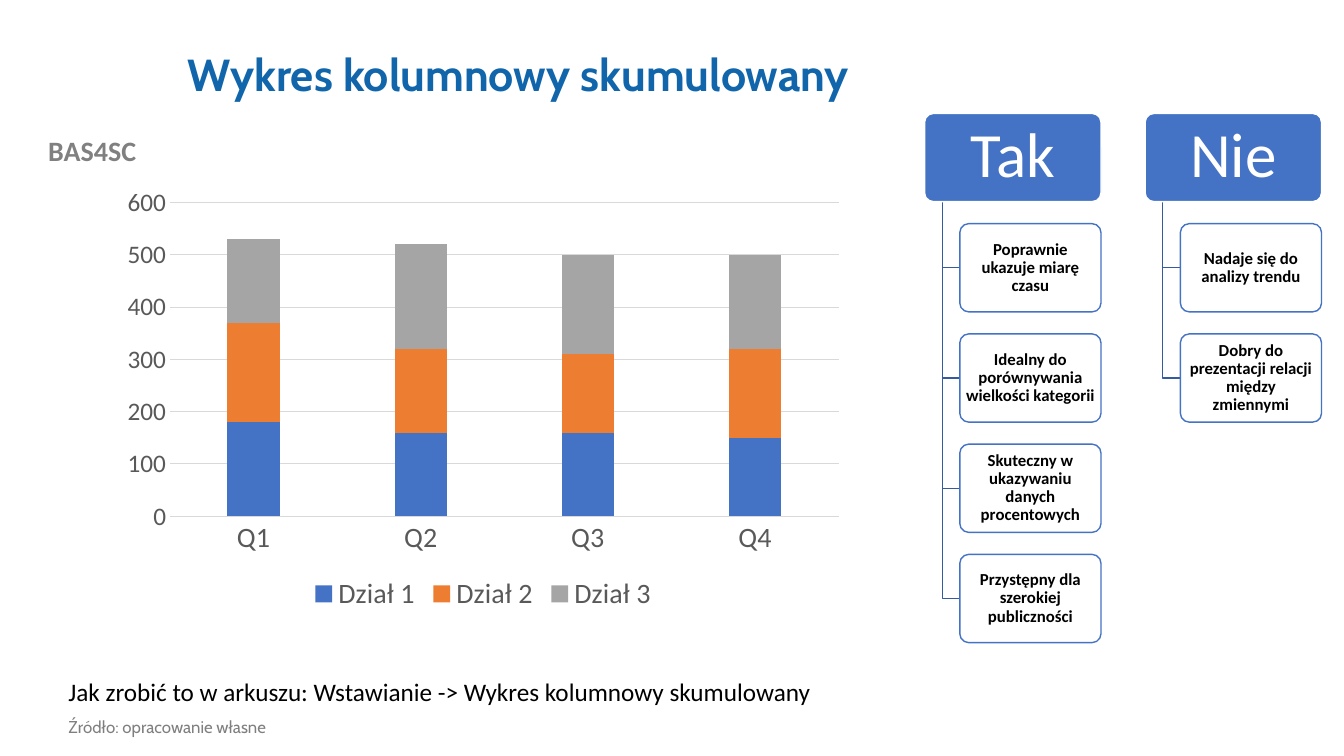
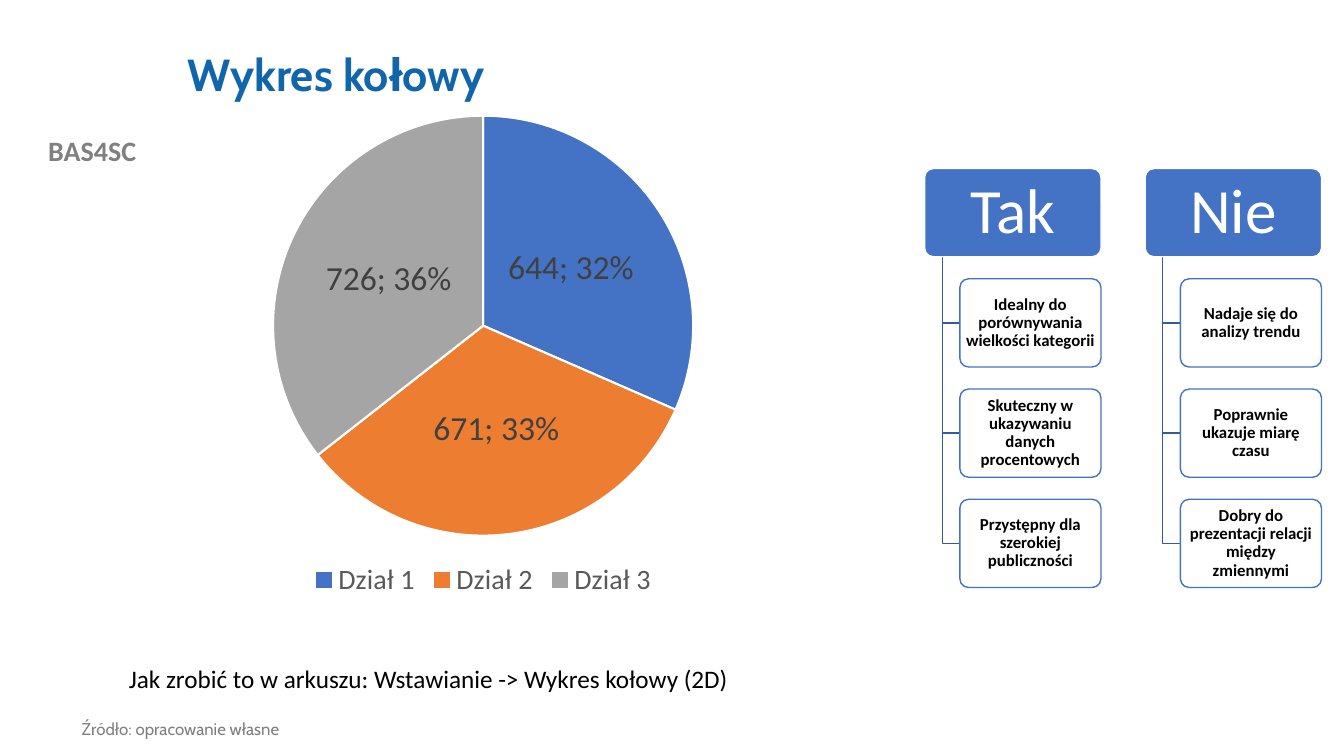
"""Build two slides comparing a stacked column chart with a pie chart."""
from lxml import etree
from pptx import Presentation
from pptx.chart.data import CategoryChartData
from pptx.dml.color import RGBColor
from pptx.enum.chart import XL_CHART_TYPE, XL_LABEL_POSITION, XL_LEGEND_POSITION, XL_TICK_MARK
from pptx.enum.shapes import MSO_SHAPE
from pptx.enum.text import MSO_ANCHOR, PP_ALIGN
from pptx.oxml.ns import qn
from pptx.util import Inches, Pt

STACKED, PIE = XL_CHART_TYPE.COLUMN_STACKED, XL_CHART_TYPE.PIE
LABEL_CENTER = XL_LABEL_POSITION.CENTER
LEGEND_BOTTOM = XL_LEGEND_POSITION.BOTTOM
NO_TICK = XL_TICK_MARK.NONE
ROUNDED = MSO_SHAPE.ROUNDED_RECTANGLE
TOP, MIDDLE = MSO_ANCHOR.TOP, MSO_ANCHOR.MIDDLE
LEFT, CENTER = PP_ALIGN.LEFT, PP_ALIGN.CENTER

WIDTH, HEIGHT = Inches(13.33), Inches(7.5)
BLUE, ORANGE, GRAY = "4472C4", "ED7D31", "A5A5A5"
WHITE, BLACK, TITLE_BLUE, BRANCH_BLUE = "FFFFFF", "000000", "1065AB", "365B9D"
PROJECT_GRAY, SOURCE_GRAY, AXIS_GRAY, LABEL_GRAY, GRID_GRAY = (
    "808080", "7F7F7F", "595959", "404040", "D9D9D9")
DEPARTMENT_COLORS = [BLUE, ORANGE, GRAY]
DEPARTMENTS = ["Dział 1", "Dział 2", "Dział 3"]

COLUMN = Inches(1.75)
CARD_HEIGHT = COLUMN // 2
ROW_STEP = int(CARD_HEIGHT * 1.25)
COLUMN_STEP = int(COLUMN * 1.25)
INDENT = COLUMN // 5
VERDICTS_LEFT = Inches(9.17)

TIME = "Poprawnie ukazuje miarę czasu"
CATEGORY_SIZE = "Idealny do porównywania wielkości kategorii"
PERCENT = "Skuteczny w ukazywaniu danych procentowych"
AUDIENCE = "Przystępny dla szerokiej publiczności"
TREND = "Nadaje się do analizy trendu"
RELATION = "Dobry do prezentacji relacji między zmiennymi"

TOPICS = [
    {
        "title": "Wykres kolumnowy skumulowany",
        "how_to": "Jak zrobić to w arkuszu: Wstawianie -> Wykres kolumnowy skumulowany",
        "how_to_at": (4.35, 88.8, 59.1, 5.6),
        "source_at": (4.35, 94.4, 37.6, 4.13),
        "chart": STACKED,
        "chart_at": (8.4, 23.6, 55.1, 58),
        "categories": ["Q1", "Q2", "Q3", "Q4"],
        "series": list(zip(DEPARTMENTS, [(180, 160, 160, 150), (190, 160, 150, 170),
                                         (160, 200, 190, 180)])),
        "verdicts": {"Tak": [TIME, CATEGORY_SIZE, PERCENT, AUDIENCE], "Nie": [TREND, RELATION]},
    },
    {
        "title": "Wykres kołowy",
        "how_to": "Jak zrobić to w arkuszu: Wstawianie -> Wykres kołowy (2D)",
        "how_to_at": (8.85, 87.07, 59.1, 5.6),
        "source_at": (5.33, 94.67, 37.6, 3.73),
        "chart": PIE,
        "chart_at": (14.55, 13.47, 42.8, 66.27),
        "categories": DEPARTMENTS,
        "series": [("Series 1", (644, 671, 726))],
        "verdicts": {"Tak": [CATEGORY_SIZE, PERCENT, AUDIENCE], "Nie": [TREND, TIME, RELATION]},
    },
]


def paint(fill, color):
    fill.solid()
    fill.fore_color.rgb = RGBColor.from_string(color)


def write(shape, text, size, color, bold=False, font="Calibri", align=LEFT,
          anchor=TOP, spacing=1.0, inset=(0.1, 0.05)):
    frame = shape.text_frame
    frame.word_wrap = True
    frame.vertical_anchor = anchor
    frame.margin_left = frame.margin_right = Inches(inset[0])
    frame.margin_top = frame.margin_bottom = Inches(inset[1])
    paragraph = frame.paragraphs[0]
    paragraph.alignment = align
    paragraph.line_spacing = spacing
    run = paragraph.add_run()
    run.text = text
    run.font.name, run.font.size, run.font.bold = font, Pt(size), bold
    paint(run.font.fill, color)


deck = Presentation()
deck.slide_width, deck.slide_height = WIDTH, HEIGHT

for topic in TOPICS:
    slide = deck.slides.add_slide(deck.slide_layouts[6])
    shapes = slide.shapes

    captions = [
        ("BAS4SC", (0, 17.07, 13.73, 5.87),
         dict(size=20, color=PROJECT_GRAY, bold=True, align=CENTER)),
        (topic["title"], (13.2, 5.33, 80, 9.73),
         dict(size=32, color=TITLE_BLUE, bold=True, font="Cabin", anchor=MIDDLE, spacing=0.9)),
        ("Źródło: opracowanie własne", topic["source_at"],
         dict(size=12, color=SOURCE_GRAY, font="Cabin", spacing=0.9)),
        (topic["how_to"], topic["how_to_at"], dict(size=18, color=BLACK)),
    ]
    for text, shares, style in captions:
        place = [int(share * side / 100) for share, side in zip(shares, (WIDTH, HEIGHT) * 2)]
        write(shapes.add_textbox(*place), text, **style)

    rows = max(len(reasons) for reasons in topic["verdicts"].values())
    verdict_top = (HEIGHT - rows * ROW_STEP - CARD_HEIGHT) // 2
    for column, (verdict, reasons) in enumerate(topic["verdicts"].items()):
        left = VERDICTS_LEFT + column * COLUMN_STEP
        cards = [(verdict, left, verdict_top, COLUMN, BLUE, WHITE,
                  dict(size=45, color=WHITE, inset=(0.09, 0.06)))]
        for row, reason in enumerate(reasons, 1):
            top = verdict_top + row * ROW_STEP
            middle = top + CARD_HEIGHT // 2
            trunk = left + INDENT // 2
            outline = shapes.build_freeform(trunk, verdict_top + CARD_HEIGHT)
            outline.add_line_segments([(trunk, middle), (left + INDENT, middle)], close=False)
            branch = outline.convert_to_shape()
            branch.shadow.inherit = False
            branch.fill.background()
            paint(branch.line.fill, BRANCH_BLUE)
            branch.line.width = Pt(1)
            cards.append((reason, left + INDENT, top, COLUMN - INDENT, WHITE, BLUE,
                          dict(size=12, color=BLACK, bold=True, inset=(0.03, 0.02))))
        for text, card_left, top, width, fill, border, style in cards:
            card = shapes.add_shape(ROUNDED, card_left, top, width, CARD_HEIGHT)
            card.adjustments[0] = 0.1
            card.shadow.inherit = False
            paint(card.fill, fill)
            paint(card.line.fill, border)
            card.line.width = Pt(1)
            write(card, text, align=CENTER, anchor=MIDDLE, spacing=0.9, **style)

    figures = CategoryChartData()
    figures.categories = topic["categories"]
    for name, values in topic["series"]:
        figures.add_series(name, values)
    place = [int(share * side / 100)
             for share, side in zip(topic["chart_at"], (WIDTH, HEIGHT) * 2)]
    chart = shapes.add_chart(topic["chart"], *place, figures).chart
    chart.has_title = False
    chart.has_legend = True
    chart.legend.position = LEGEND_BOTTOM
    chart.legend.include_in_layout = False
    plot = chart.plots[0]
    plot.vary_by_categories = topic["chart"] == PIE
    chart_fonts = [(chart.font, 10, BLACK), (chart.legend.font, 20, AXIS_GRAY)]

    if topic["chart"] == STACKED:
        plot.gap_width, plot.overlap = 219, 100
        quarters, amounts = chart.category_axis, chart.value_axis
        amounts.minimum_scale, amounts.maximum_scale, amounts.major_unit = 0, 600, 100
        quarters.major_tick_mark = amounts.major_tick_mark = NO_TICK
        amounts.format.line.fill.background()
        for line in (quarters.format.line, amounts.major_gridlines.format.line):
            paint(line.fill, GRID_GRAY)
            line.width = Pt(0.75)
        chart_fonts += [(quarters.tick_labels.font, 20, AXIS_GRAY),
                        (amounts.tick_labels.font, 18, AXIS_GRAY)]
        for series, color in zip(plot.series, DEPARTMENT_COLORS):
            paint(series.format.fill, color)
    else:
        pie = plot.series[0]
        for index, color in enumerate(DEPARTMENT_COLORS):
            wedge = pie.points[index].format
            paint(wedge.fill, color)
            paint(wedge.line.fill, WHITE)
            wedge.line.width = Pt(1.5)
        labels = pie.data_labels
        labels.show_value = labels.show_percentage = True
        labels.position = LABEL_CENTER
        separator = etree.Element(qn("c:separator"))
        separator.text = "; "
        labels._element.find(qn("c:showBubbleSize")).addnext(separator)
        chart_fonts.append((labels.font, 24, LABEL_GRAY))

    for font, size, color in chart_fonts:
        font.name, font.size = "Calibri", Pt(size)
        paint(font.fill, color)

deck.save("out.pptx")
